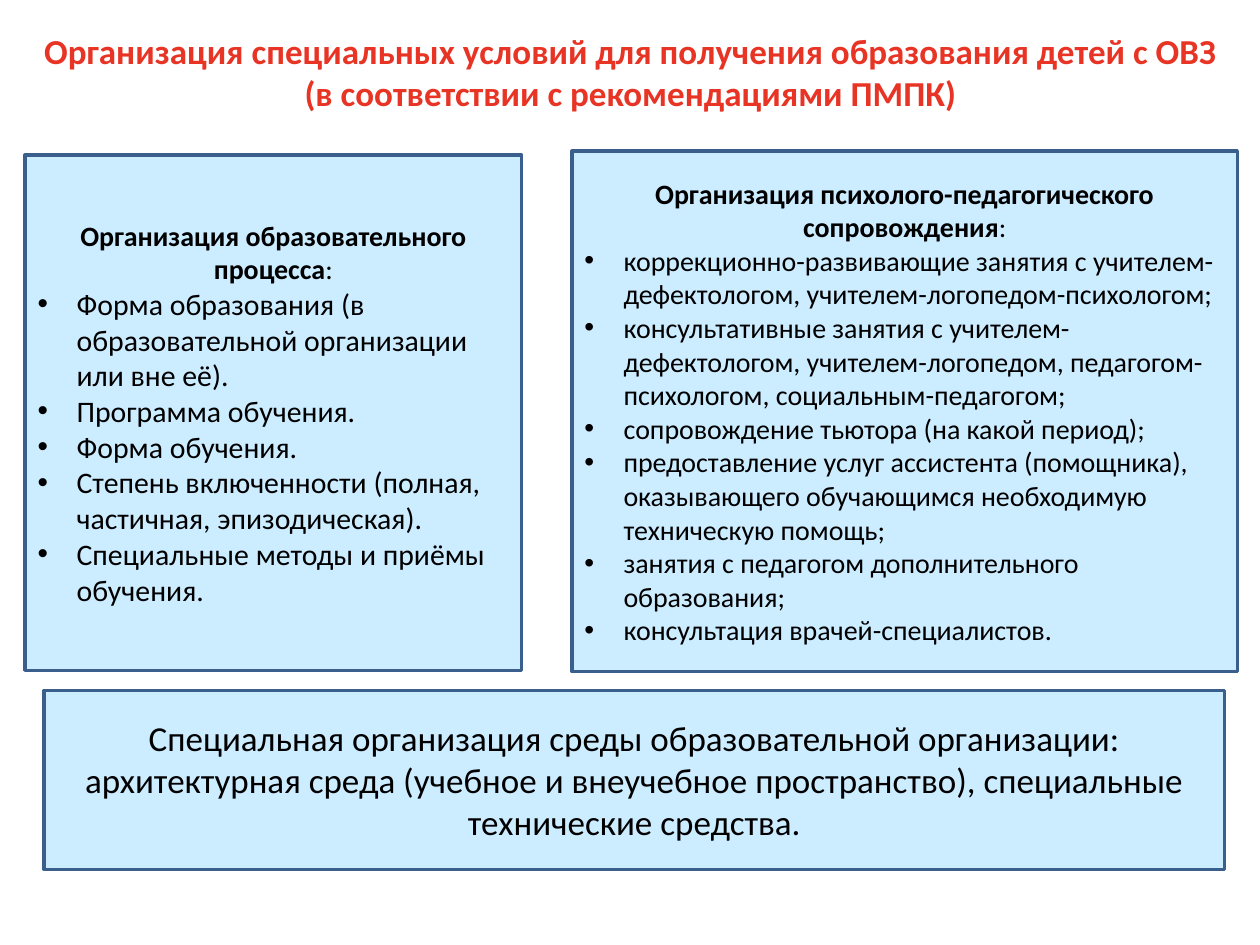
from dataclasses import dataclass

from lxml import etree
from pptx import Presentation
from pptx.dml.color import RGBColor
from pptx.enum import shapes, text
from pptx.oxml import ns
from pptx.util import Inches, Pt

FONT = "Calibri"
RED = RGBColor(0xE8, 0x34, 0x25)
BLACK = RGBColor(0, 0, 0)
PALE_BLUE = RGBColor(0xCC, 0xEC, 0xFF)
BORDER_BLUE = RGBColor(0x3A, 0x5F, 0x8C)
BULLET_INDENT = Inches(0.31)


@dataclass(frozen=True)
class Box:
    left: float
    top: float
    width: float
    height: float

    def lengths(self):
        return [Inches(v) for v in (self.left, self.top, self.width, self.height)]


@dataclass(frozen=True)
class Panel:
    box: Box
    heading: str
    items: tuple[str, ...]
    item_size: int


TITLE_BOX = Box(0.2, 0.21, 9.61, 0.71)
ENVIRONMENT_BOX = Box(0.35, 5.48, 9.37, 1.42)

PANELS = (
    Panel(
        Box(0.2, 1.23, 3.94, 4.09),
        "Организация образовательного процесса",
        (
            "Форма образования (в образовательной организации или вне её).",
            "Программа обучения.",
            "Форма обучения.",
            "Степень включенности (полная, частичная, эпизодическая).",
            "Специальные методы и приёмы обучения.",
        ),
        17,
    ),
    Panel(
        Box(4.54, 1.2, 5.28, 4.13),
        "Организация психолого-педагогического сопровождения",
        (
            "коррекционно-развивающие занятия с учителем-дефектологом, "
            "учителем-логопедом-психологом;",
            "консультативные занятия с учителем-дефектологом, учителем-логопедом, "
            "педагогом-психологом, социальным-педагогом;",
            "сопровождение тьютора (на какой период);",
            "предоставление услуг ассистента (помощника), оказывающего обучающимся "
            "необходимую техническую помощь;",
            "занятия с педагогом дополнительного образования;",
            "консультация врачей-специалистов.",
        ),
        16,
    ),
)


def add_text(paragraph, words: str, *, size: int, bold: bool = False,
             color: RGBColor = BLACK, centered: bool = True) -> None:
    paragraph.alignment = text.PP_ALIGN.CENTER if centered else text.PP_ALIGN.LEFT
    run = paragraph.add_run()
    run.text = words
    run.font.name = FONT
    run.font.size = Pt(size)
    run.font.bold = bold
    run.font.color.rgb = color


def add_bullet(paragraph) -> None:
    properties = paragraph._p.get_or_add_pPr()
    properties.set("marL", str(BULLET_INDENT))
    properties.set("indent", str(-BULLET_INDENT))
    etree.SubElement(properties, ns.qn("a:buFont")).set("typeface", "Arial")
    etree.SubElement(properties, ns.qn("a:buChar")).set("char", "•")


def prepare_frame(shape):
    frame = shape.text_frame
    frame.word_wrap = True
    frame.vertical_anchor = text.MSO_ANCHOR.MIDDLE
    return frame


def add_frame(slide, box: Box):
    rectangle = slide.shapes.add_shape(shapes.MSO_SHAPE.RECTANGLE, *box.lengths())
    rectangle.shadow.inherit = False
    rectangle.fill.solid()
    rectangle.fill.fore_color.rgb = PALE_BLUE
    rectangle.line.color.rgb = BORDER_BLUE
    rectangle.line.width = Pt(2)
    return prepare_frame(rectangle)


def add_panel(slide, panel: Panel) -> None:
    frame = add_frame(slide, panel.box)
    heading = frame.paragraphs[0]
    add_text(heading, panel.heading, size=16, bold=True)
    add_text(heading, ":", size=16)
    for item in panel.items:
        paragraph = frame.add_paragraph()
        add_bullet(paragraph)
        add_text(paragraph, item, size=panel.item_size, centered=False)


def main() -> None:
    deck = Presentation()
    deck.slide_width, deck.slide_height = Inches(10), Inches(7.5)
    slide = deck.slides.add_slide(deck.slide_layouts[6])

    # Title
    title = prepare_frame(slide.shapes.add_textbox(*TITLE_BOX.lengths()))
    add_text(
        title.paragraphs[0],
        "Организация специальных условий для получения образования детей с ОВЗ "
        "(в соответствии с рекомендациями ПМПК)",
        size=20, bold=True, color=RED,
    )

    # Educational process and support
    for panel in PANELS:
        add_panel(slide, panel)

    # Environment
    environment = add_frame(slide, ENVIRONMENT_BOX)
    add_text(
        environment.paragraphs[0],
        "Специальная организация среды образовательной организации: "
        "архитектурная среда (учебное и внеучебное пространство), "
        "специальные технические средства.",
        size=20,
    )

    deck.save("out.pptx")


if __name__ == "__main__":
    main()
